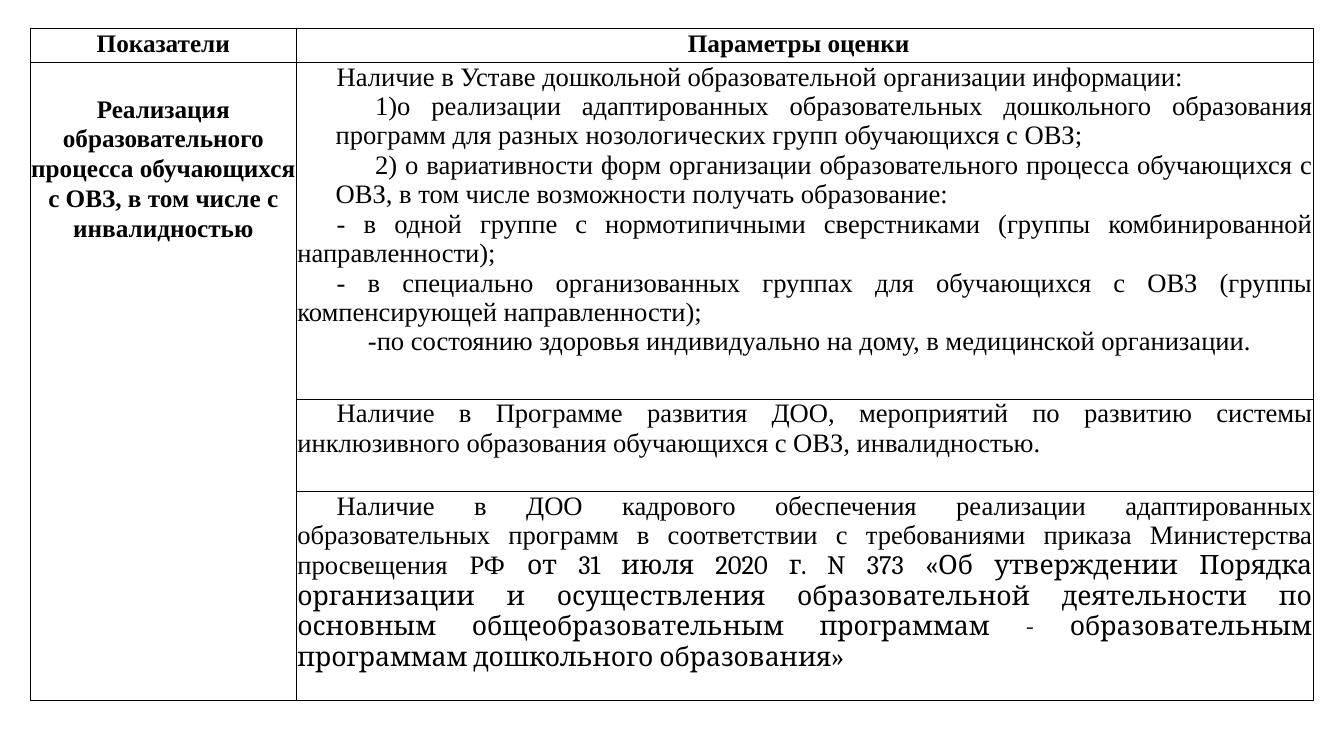
"""Builds a slide with a table of indicators and assessment parameters for inclusive preschool education."""
from lxml.etree import SubElement
from pptx import Presentation
from pptx.dml.color import RGBColor
from pptx.enum.text import PP_ALIGN as Align
from pptx.oxml import parse_xml
from pptx.oxml.ns import nsdecls, qn
from pptx.util import Inches, Pt

BLACK = RGBColor(0, 0, 0)
SERIF = "Times New Roman"
COL_WIDTHS = [2.64, 10.09]
ROW_HEIGHTS = [0.34, 3.34, 0.92, 2.07]


def add_text(p, *texts, size=19, bold=False, align=Align.JUSTIFY, spacing=None,
             left=0, indent=0.39, bullet=None, fonts=(SERIF,)):
    p.alignment = align
    if spacing:
        p.line_spacing = spacing
    pPr = p._p.get_or_add_pPr()
    pPr.set("marL", str(Inches(left)))
    pPr.set("indent", str(Inches(indent)))
    if bullet:
        SubElement(pPr, qn("a:buFont"), typeface=SERIF)
        tag, key, value = bullet
        SubElement(pPr, qn(tag)).set(key, value)
    for text, font in zip(texts, fonts):
        r = p.add_run()
        r.text = text
        r.font.name, r.font.size, r.font.bold = font, Pt(size), bold
        r.font.color.rgb = BLACK


NUMBER = dict(left=0.38, bullet=("a:buAutoNum", "type", "arabicParenR"))
DASH = dict(left=0.31, bullet=("a:buChar", "char", "-"))
HEADING = dict(size=18, bold=True, align=Align.CENTER, spacing=1.07, indent=0)

CHARTER = [
    ("Наличие в Уставе дошкольной образовательной организации информации:", {}),
    ("о реализации адаптированных образовательных дошкольного образования программ "
     "для разных нозологических групп обучающихся с ОВЗ;", NUMBER),
    (" о вариативности форм организации образовательного процесса обучающихся с ОВЗ, "
     "в том числе возможности получать образование:", NUMBER),
    ("- в одной группе с нормотипичными сверстниками (группы комбинированной направленности);", {}),
    ("- в специально организованных группах для обучающихся с ОВЗ "
     "(группы компенсирующей направленности);", {}),
    ("по состоянию здоровья индивидуально на дому, в медицинской организации.", DASH),
]

prs = Presentation()
prs.slide_width, prs.slide_height = Inches(13.33), Inches(7.5)
s = prs.slides.add_slide(prs.slide_layouts[6])
table = s.shapes.add_table(len(ROW_HEIGHTS), len(COL_WIDTHS), Inches(0.3), Inches(0.28),
                           Inches(sum(COL_WIDTHS)), Inches(sum(ROW_HEIGHTS))).table
table.first_row = table.horz_banding = False
for col, width in zip(table.columns, COL_WIDTHS):
    col.width = Inches(width)
for row, height in zip(table.rows, ROW_HEIGHTS):
    row.height = Inches(height)

for cell in table.iter_cells():
    cell.margin_left = cell.margin_right = Inches(0.01)
    cell.margin_top = cell.margin_bottom = 0
    tcPr = cell._tc.get_or_add_tcPr()
    for side in "LRTB":
        tcPr.append(parse_xml(
            f'<a:ln{side} {nsdecls("a")} w="{Pt(1)}"><a:solidFill>'
            f'<a:srgbClr val="{BLACK}"/></a:solidFill></a:ln{side}>'))
    cell.fill.background()

indicator = table.cell(1, 0)
indicator.merge(table.cell(3, 0))
indicator.margin_top = Inches(0.31)

add_text(table.cell(0, 0).text_frame.paragraphs[0], "Показатели", **HEADING)
add_text(table.cell(0, 1).text_frame.paragraphs[0], "Параметры оценки  ", **HEADING)
add_text(indicator.text_frame.paragraphs[0],
         "Реализация образовательного процесса обучающихся с ОВЗ, "
         "в том числе с инвалидностью", **HEADING)

tf = table.cell(1, 1).text_frame
for i, (text, style) in enumerate(CHARTER):
    p = tf.add_paragraph() if i else tf.paragraphs[0]
    add_text(p, text, **style)

add_text(table.cell(2, 1).text_frame.paragraphs[0],
         "Наличие в Программе развития ДОО, мероприятий по развитию системы "
         "инклюзивного образования обучающихся с ОВЗ, инвалидностью.")
add_text(table.cell(3, 1).text_frame.paragraphs[0],
         "Наличие в ДОО кадрового обеспечения реализации адаптированных образовательных "
         "программ в соответствии с требованиями приказа Министерства просвещения РФ ",
         "от 31 июля 2020 г. N 373 «Об утверждении Порядка организации и осуществления "
         "образовательной деятельности по основным общеобразовательным программам - "
         "образовательным программам дошкольного образования»",
         fonts=(SERIF, "Cambria"))

prs.save("out.pptx")
